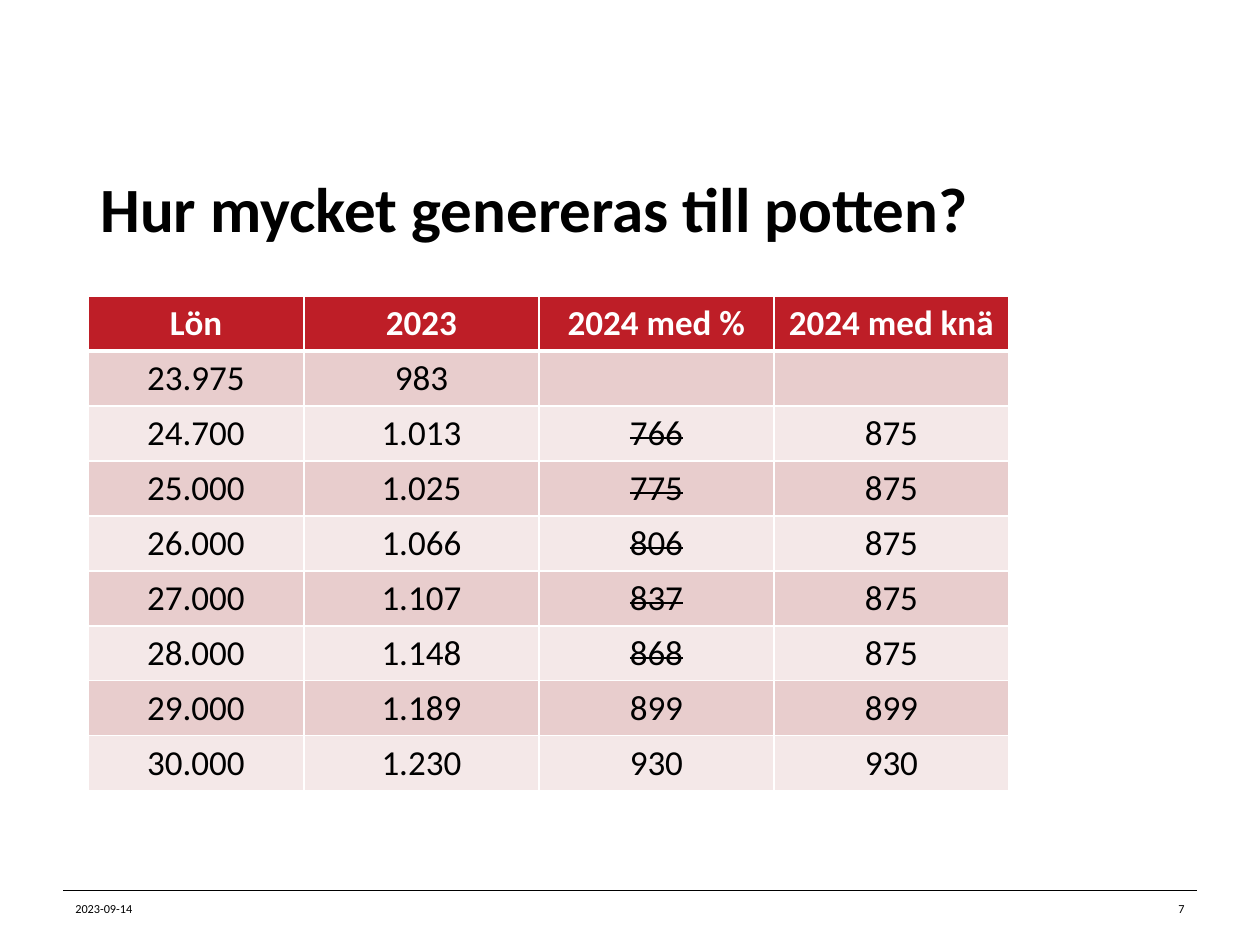
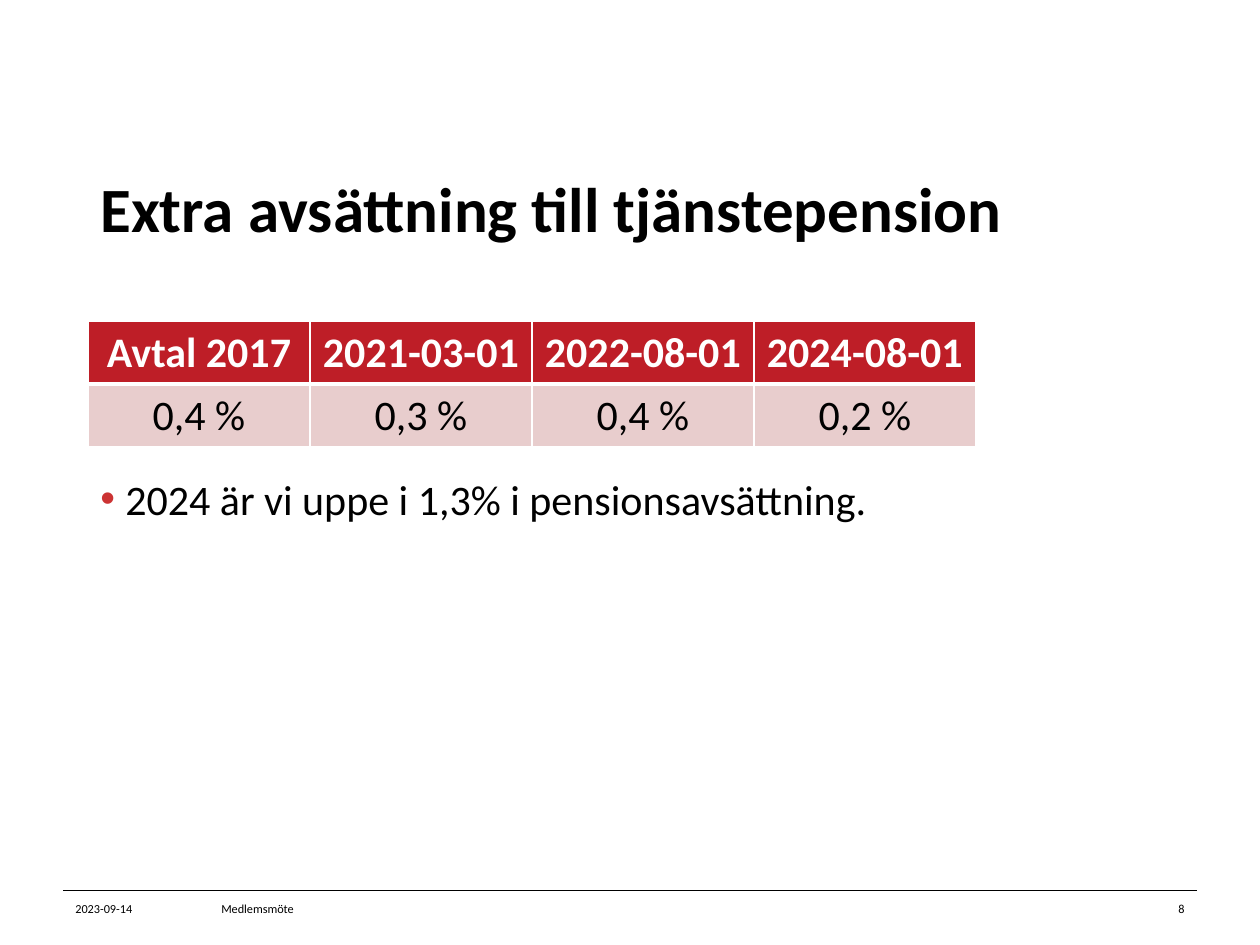
from lxml.etree import SubElement as Sub
from pptx import Presentation
from pptx.dml.color import RGBColor as RGB
from pptx.enum.shapes import MSO_CONNECTOR as Link
from pptx.enum.text import MSO_ANCHOR as Anchor, PP_ALIGN as Align
from pptx.oxml.ns import qn
from pptx.util import Pt

COLORS = {"ink": "000000", "paper": "FFFFFF", "head": "BE1E27",
          "odd": "E8CDCD", "even": "F4E8E8", "dot": "CC3333"}
FONT = "Calibri"
DATE = "2023-09-14"
PX = 914400 / 126
LEFT, WIDE = 88, 1109
FOOT, FOOT_H = 890, 37

# "~" marks a struck figure
SLIDES = [
    {"title": "Hur mycket genereras till potten?", "page": "7",
     "top": 296, "size": 20, "cols": [216, 235, 235, 235], "row_h": 55,
     "rows": [
         ("Lön", "2023", "2024 med %", "2024 med knä"),
         ("23.975", "983", "", ""),
         ("24.700", "1.013", "~766", "875"),
         ("25.000", "1.025", "~775", "875"),
         ("26.000", "1.066", "~806", "875"),
         ("27.000", "1.107", "~837", "875"),
         ("28.000", "1.148", "~868", "875"),
         ("29.000", "1.189", "899", "899"),
         ("30.000", "1.230", "930", "930")]},
    {"title": "Extra avsättning till tjänstepension", "page": "8",
     "top": 321, "size": 24, "cols": [222] * 4, "row_h": 63,
     "rows": [
         ("Avtal 2017", "2021-03-01", "2022-08-01", "2024-08-01"),
         ("0,4 %", "0,3 %", "0,4 %", "0,2 %")],
     "point": "2024 är vi uppe i 1,3% i pensionsavsättning.",
     "note": "Medlemsmöte"},
]


def px(*vals):
    return [round(v * PX) for v in vals]


def style(para, size, color="ink", bold=False, align=Align.LEFT):
    para.alignment = align
    for item in [para, *para.runs]:
        font = item.font
        font.name, font.size, font.bold = FONT, Pt(size), bold
        font.color.rgb = RGB.from_string(COLORS[color])


def add_text(slide, box, text, size, anchor=Anchor.MIDDLE, **look):
    frame = slide.shapes.add_textbox(*px(*box)).text_frame
    frame.word_wrap = True
    frame.vertical_anchor = anchor
    frame.text = text
    para = frame.paragraphs[0]
    style(para, size, **look)
    return para


def add_base(slide, data):
    """Title, footer rule and footer texts."""
    title = add_text(slide, (LEFT, 139, WIDE, 157), data["title"], 36, bold=True)
    title.line_spacing = Pt(32)
    rule = slide.shapes.add_connector(Link.STRAIGHT, *px(63, FOOT, 1197, FOOT))
    rule.line.width = Pt(0.25)
    rule.line.color.rgb = RGB.from_string(COLORS["ink"])
    Sub(rule._element.spPr, qn("a:effectLst"))
    for left, wide, text, align in (
            (63, 121, DATE, Align.LEFT),
            (209, 843, data.get("note"), Align.LEFT),
            (1077, 120, data["page"], Align.RIGHT)):
        if text:
            add_text(slide, (left, FOOT, wide, FOOT_H), text, 7, align=align)


def add_edges(cell, top, bottom):
    props = cell._tc.get_or_add_tcPr()
    for side, width in (("L", 1), ("R", 1), ("T", top), ("B", bottom)):
        edge = Sub(props, qn(f"a:ln{side}"), w=str(Pt(width)))
        Sub(Sub(edge, qn("a:solidFill")), qn("a:srgbClr"), val=COLORS["paper"])


def add_grid(slide, data):
    rows, cols, high = data["rows"], data["cols"], data["row_h"]
    box = px(LEFT, data["top"], sum(cols), high * len(rows))
    table = slide.shapes.add_table(len(rows), len(cols), *box).table
    for col, wide in zip(table.columns, px(*cols)):
        col.width = wide
    for r, row in enumerate(rows):
        head = r == 0
        table.rows[r].height = px(high)[0]
        fill = "head" if head else "odd" if r % 2 else "even"
        for c, text in enumerate(row):
            cell = table.cell(r, c)
            add_edges(cell, 3 if r == 1 else 1, 3 if head else 1)
            cell.fill.solid()
            cell.fill.fore_color.rgb = RGB.from_string(COLORS[fill])
            cell.text_frame.text = text.lstrip("~")
            para = cell.text_frame.paragraphs[0]
            style(para, data["size"], "paper" if head else "ink", head, Align.CENTER)
            if text.startswith("~"):
                para.runs[0]._r.get_or_add_rPr().set("strike", "sngStrike")


def add_point(slide, text):
    para = add_text(slide, (LEFT, 472, WIDE, 379), text, 24, Anchor.TOP)
    para.line_spacing, para.space_after = Pt(26), Pt(6)
    props = para._p.get_or_add_pPr()
    indent = px(25)[0]
    props.set("marL", str(indent))
    props.set("indent", str(-indent))
    tint = Sub(props, qn("a:buClr"))
    Sub(tint, qn("a:srgbClr"), val=COLORS["dot"])
    Sub(props, qn("a:buFont"), typeface="Arial")
    Sub(props, qn("a:buChar"), char="•")
    # paragraph defaults belong after the bullet
    props.append(props.find(qn("a:defRPr")))


def main():
    deck = Presentation()
    deck.slide_width, deck.slide_height = px(1260, 945)
    for data in SLIDES:
        slide = deck.slides.add_slide(deck.slide_layouts[6])
        add_base(slide, data)
        add_grid(slide, data)
        if "point" in data:
            add_point(slide, data["point"])
    deck.save("out.pptx")


if __name__ == "__main__":
    main()
